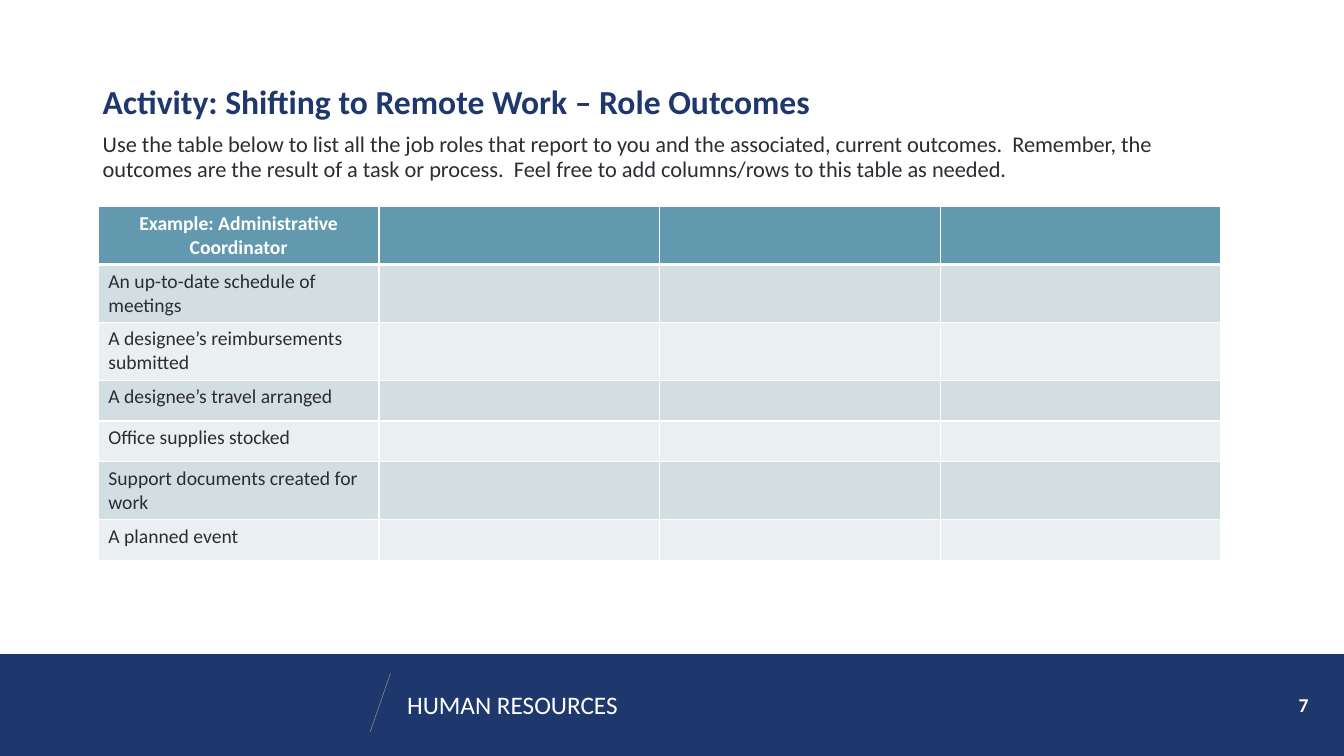
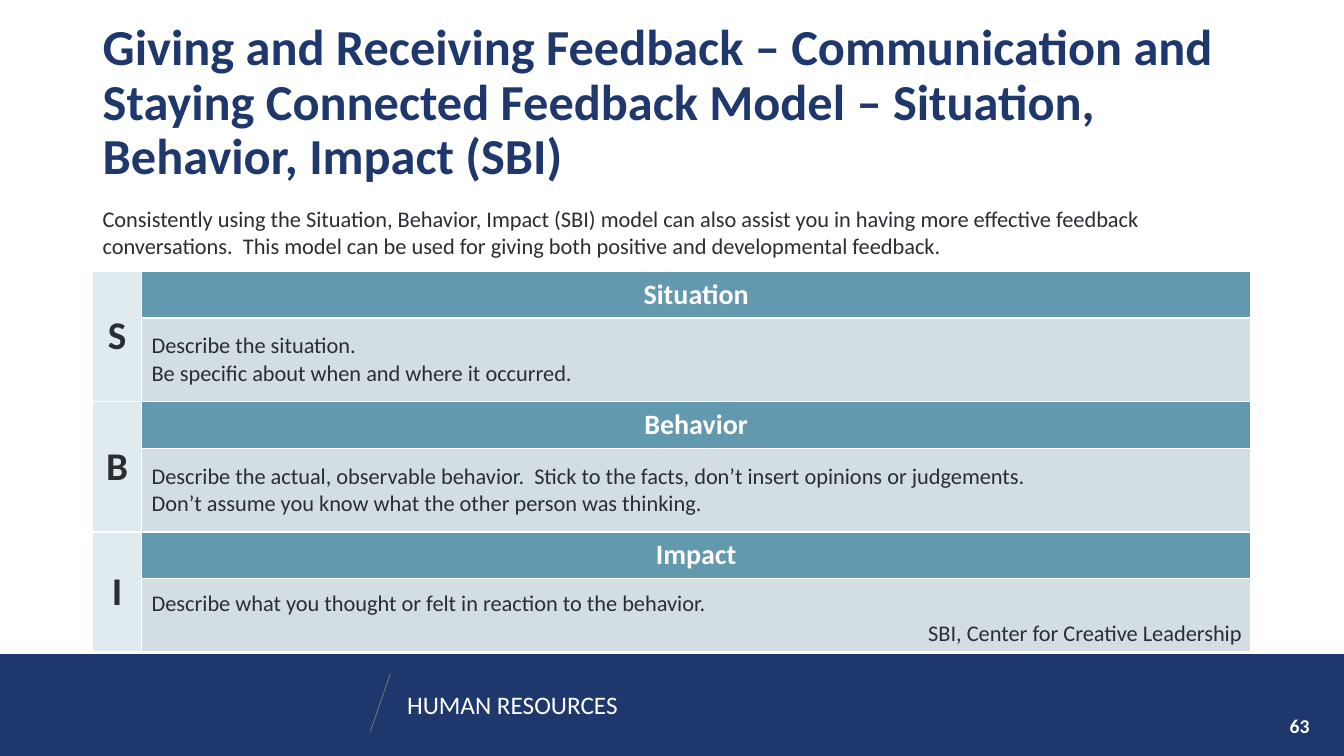
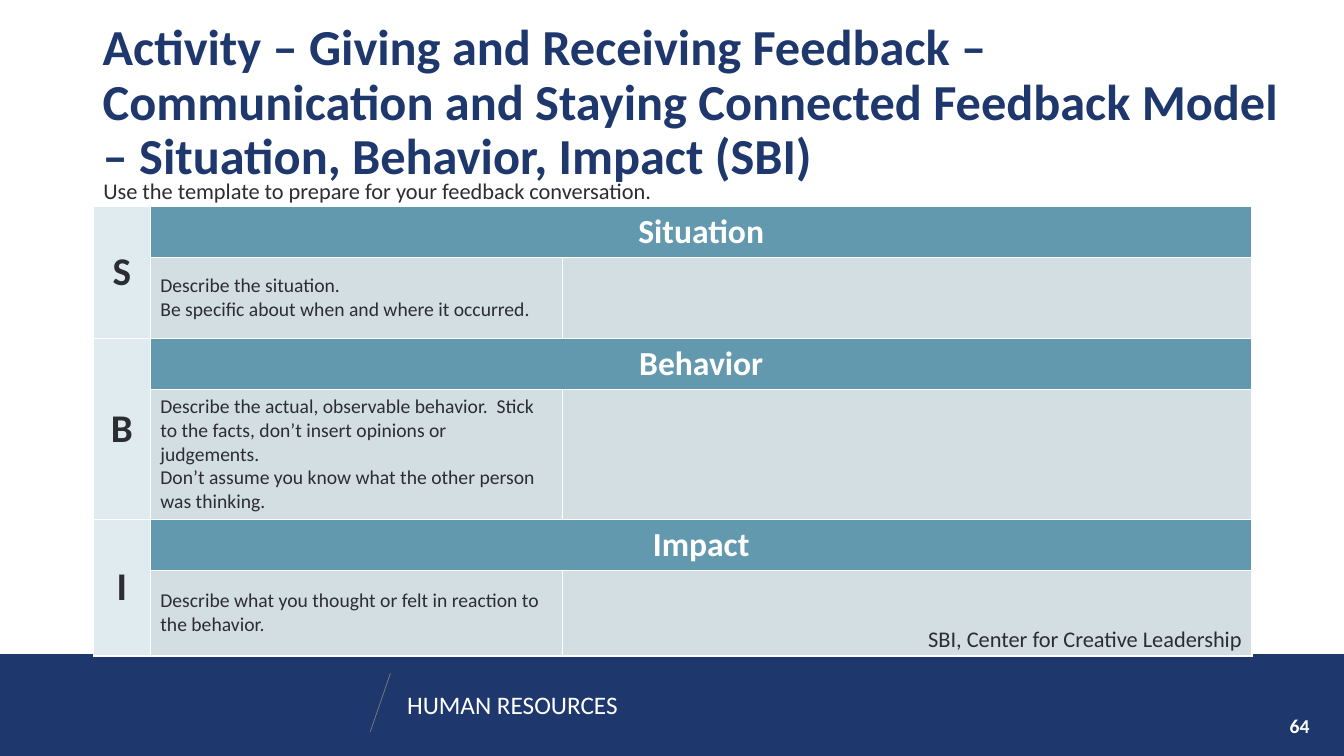
import pptx
import pptx.dml.color
import pptx.enum.shapes
import pptx.enum.text
import pptx.oxml
import pptx.util
import lxml.etree

Pt = pptx.util.Pt
hue = pptx.dml.color.RGBColor.from_string
Align = pptx.enum.text.PP_ALIGN
Mid = pptx.enum.text.MSO_ANCHOR.MIDDLE
NAVY, TEAL, INK, WHITE = "1E376C", "6399AE", "2C2C33", "FFFFFF"
MIST, PALE, ICE, GREY = "D3DEE3", "EAEFF2", "E0EBEF", "7E7E7C"
SPACE = "http://schemas.openxmlformats.org/drawingml/2006/main"


def write(frame, text, size, tint, bold=False, align=Align.LEFT):
    frame.text = text
    frame.word_wrap = True
    for para in frame.paragraphs:
        para.alignment = align
        font = para.font
        font.name, font.size, font.bold = "Calibri", Pt(size), bold
        font.color.rgb = hue(tint)


def paint(cell, tint, top=1, low=1):
    props = cell._tc.get_or_add_tcPr()
    for side, width in zip("LRTB", (1, 1, top, low)):
        props.append(pptx.oxml.parse_xml(
            f'<a:ln{side} xmlns:a="{SPACE}" w="{Pt(width)}"><a:solidFill>'
            f'<a:srgbClr val="{WHITE}"/></a:solidFill></a:ln{side}>'))
    cell.fill.solid()
    cell.fill.fore_color.rgb = hue(tint)


deck = pptx.Presentation()
deck.slide_width, deck.slide_height = Pt(960), Pt(540)

# Layout index, title, title size, title width
pages = [
    (1, "Activity: Shifting to Remote Work – Role Outcomes", 24, 827.3),
    (5, "Giving and Receiving Feedback – Communication and Staying Connected "
        "Feedback Model – Situation, Behavior, Impact (SBI)", 36, 827.3),
    (5, "Activity – Giving and Receiving Feedback –Communication and Staying "
        "Connected Feedback Model – Situation, Behavior, Impact (SBI)", 36, 859),
]

# Shared band, slash and title
for index, head, size, width in pages:
    slide = deck.slides.add_slide(deck.slide_layouts[index])
    band = slide.shapes.add_shape(
        pptx.enum.shapes.MSO_SHAPE.RECTANGLE, 0, Pt(467.3), Pt(960), Pt(72.7))
    band.shadow.inherit = False
    band.fill.solid()
    band.fill.fore_color.rgb = hue(NAVY)
    band.line.fill.background()

    slash = slide.shapes.add_connector(
        pptx.enum.shapes.MSO_CONNECTOR.STRAIGHT,
        Pt(264.5), Pt(522.7), Pt(278.9), Pt(481))
    slash.line.color.rgb = hue(GREY)
    slash.line.width = Pt(0.5)
    lxml.etree.SubElement(slash._element.spPr, f"{{{SPACE}}}effectLst")

    title = slide.shapes.title
    title.left, title.top = Pt(66.2), Pt(28.5)
    title.width, title.height = Pt(width), Pt(91.4)
    write(title.text_frame, head, size, NAVY, True)
    title.text_frame.auto_size = pptx.enum.text.MSO_AUTO_SIZE.NONE
    title.text_frame.vertical_anchor = Mid
    title.text_frame.paragraphs[0].line_spacing = 0.9

# Role outcomes: instructions
roles, model, drill = deck.slides
body = roles.placeholders[1]
body.left, body.top, body.width, body.height = Pt(66.2), Pt(90.7), Pt(827.3), Pt(204.5)
body.text_frame.text = (
    "Use the table below to list all the job roles that report to you and the "
    "associated, current outcomes.  Remember, the outcomes are the result of a "
    "task or process.  Feel free to add columns/rows to this table as needed.")
body.text_frame.auto_size = pptx.enum.text.MSO_AUTO_SIZE.NONE
para = body.text_frame.paragraphs[0]
props = para._p.get_or_add_pPr()
props.set("marL", "0")
props.set("indent", "0")
lxml.etree.SubElement(props, f"{{{SPACE}}}buNone")
para.font.name, para.font.size = "Calibri", Pt(16)
para.font.color.rgb = hue(INK)
para.line_spacing, para.space_before, para.space_after = 0.95, Pt(0), Pt(2)

# Role outcomes: table
tasks = [
    "Example: Administrative Coordinator",
    "An up-to-date schedule of meetings",
    "A designee’s reimbursements submitted",
    "A designee’s travel arranged",
    "Office supplies stocked",
    "Support documents created for work",
    "A planned event",
]
grid = roles.shapes.add_table(
    len(tasks), 4, Pt(70.2), Pt(147.6), Pt(802), Pt(29.2 * len(tasks))).table
for row, task in enumerate(tasks):
    first = row == 0
    tint = TEAL if first else MIST if row % 2 else PALE
    for cell in grid.rows[row].cells:
        paint(cell, tint, 3 if row == 1 else 1, 3 if first else 1)
    write(grid.cell(row, 0).text_frame, task, 14, WHITE if first else INK,
          first, Align.CENTER if first else Align.LEFT)

# Feedback model: one pair of rows per step
steps = [
    ("Situation", "Describe the situation.\n"
     "Be specific about when and where it occurred."),
    ("Behavior", "Describe the actual, observable behavior.  Stick to the facts, "
     "don’t insert opinions or judgements.\n"
     "Don’t assume you know what the other person was thinking."),
    ("Impact", "Describe what you thought or felt in reaction to the behavior."),
]
# Slide, left, top, column widths, heading height, text heights, text sizes
plans = [
    (model, 66.2, 193.7, (34.9, 792.4), 33.4, (59.8, 59.8, 51.8), 20, 16),
    (drill, 66.7, 147.6, (40.7, 294.5, 492.5), 36.2, (57.6, 92.6, 61.2), 24, 14),
]
for slide, left, top, cols, bar, highs, big, small in plans:
    grid = slide.shapes.add_table(
        6, len(cols), Pt(left), Pt(top), Pt(sum(cols)),
        Pt(3 * bar + sum(highs))).table
    grid.first_row = grid.horz_banding = False
    for col, width in zip(grid.columns, cols):
        col.width = Pt(width)
    for step, ((name, text), high) in enumerate(zip(steps, highs)):
        row = 2 * step
        grid.rows[row].height, grid.rows[row + 1].height = Pt(bar), Pt(high)
        for line, tint in ((row, TEAL), (row + 1, MIST)):
            for num, cell in enumerate(grid.rows[line].cells):
                paint(cell, tint if num else ICE)
                cell.vertical_anchor = Mid
        mark, head, note = (grid.cell(row, 0), grid.cell(row, 1),
                            grid.cell(row + 1, 1))
        mark.merge(grid.cell(row + 1, 0))
        if len(cols) > 2:
            head.merge(grid.cell(row, len(cols) - 1))
        write(mark.text_frame, name[0], 28, INK, True, Align.CENTER)
        write(head.text_frame, name, big, WHITE, True, Align.CENTER)
        write(note.text_frame, text, small, INK)
        note.margin_right = Pt(12)
        # Room for the credit below the last text
        if slide is model and name == "Impact":
            note.margin_bottom = Pt(19.4)

# Labels: box, text, size, colour, bold, alignment
intro = ("Consistently using the Situation, Behavior, Impact (SBI) model can also "
         "assist you in having more effective feedback conversations.  This model "
         "can be used for giving both positive and developmental feedback.")
ask = "Use the template to prepare for your feedback conversation."
credit = "SBI, Center for Creative Leadership"
unit = ((283.7, 488.9, 248.4, 28.8), "HUMAN RESOURCES", 18, WHITE)
labels = [
    (roles, [((844.6, 488.9, 97.2, 28.8), "7", 14, WHITE, True, Align.RIGHT)]),
    (model, [((66.2, 142.8, 818.6, 46), intro, 16, INK),
             ((609.8, 438.8, 284.4, 26.6), credit, 16, INK, False, Align.RIGHT),
             ((845.3, 504, 97.2, 28.8), "63", 14, WHITE, True, Align.RIGHT)]),
    (drill, [((66.7, 123.1, 818.6, 26.6), ask, 16, INK),
             ((617, 442.8, 277.2, 26.6), credit, 16, INK, False, Align.RIGHT),
             ((845.3, 504, 97.2, 28.8), "64", 14, WHITE, True, Align.RIGHT)]),
]
for slide, items in labels:
    for box, *style in [unit] + items:
        frame = slide.shapes.add_textbox(*map(Pt, box)).text_frame
        write(frame, *style)
        frame.vertical_anchor = Mid

deck.save("out.pptx")
